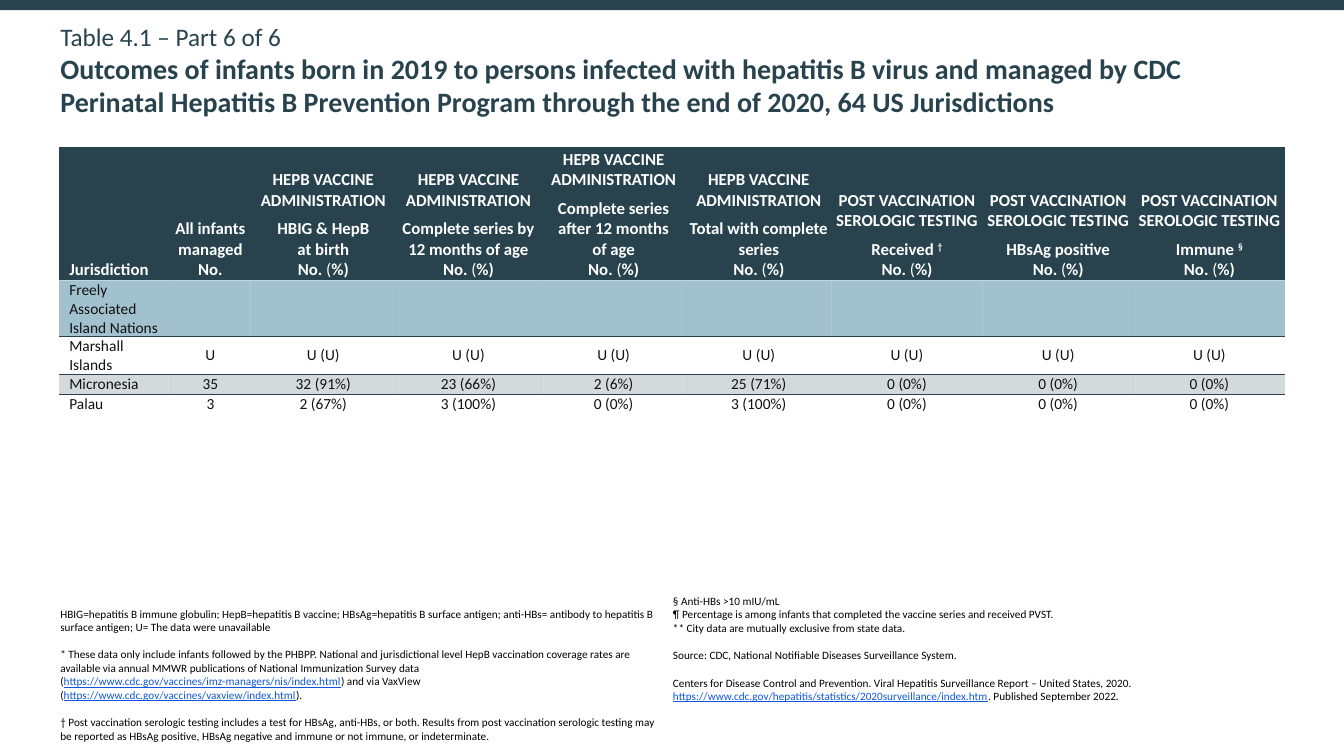
from copy import deepcopy

from lxml.etree import SubElement
from pptx import Presentation
from pptx.dml.color import RGBColor
from pptx.enum.shapes import MSO_SHAPE
from pptx.enum.text import MSO_ANCHOR, PP_ALIGN
from pptx.oxml import parse_xml
from pptx.oxml.ns import nsdecls, qn
from pptx.util import Pt

COLORS = {
    "navy": "28434E", "steel": "6499AF", "white": "FFFFFF",
    "ink": "111111", "black": "000000", "link": "0F56DC",
}
PLAIN_TABLE = "{2D5ABB26-0587-4C30-8999-92F81FD0307C}"


def span(text, **style):
    return text, style


class Page:
    """Holds the slide and its style, and draws each kind of element."""

    def __init__(self, deck, font="Calibri"):
        self.font = font
        self.shapes = deck.slides.add_slide(deck.slide_layouts[6]).shapes

    def add_span(self, para, text, size=12, color="black", bold=False,
                 underline=False, raised=False):
        for index, line in enumerate(text.split("\n")):
            if index:
                para.add_line_break()
                para._p[-1].append(deepcopy(run._r.rPr))
            run = para.add_run()
            run.text = line
            font = run.font
            font.name, font.size = self.font, Pt(size)
            font.bold, font.underline = bold, underline
            font.color.rgb = RGBColor.from_string(COLORS[color])
            if raised:
                font._element.set("baseline", "30000")

    def add_paras(self, frame, paras, before=(), after=(), align=PP_ALIGN.LEFT,
                  **style):
        frame.word_wrap = True
        for index, spans in enumerate(paras):
            para = frame.add_paragraph() if index else frame.paragraphs[0]
            para.alignment = align
            if index in before:
                para.space_before = Pt(10)
            if index in after:
                para.space_after = Pt(6)
            for item in [spans] if isinstance(spans, str) else spans:
                text, extra = span(item) if isinstance(item, str) else item
                self.add_span(para, text, **{**style, **extra})

    def band(self, left, top, width, height, color):
        box = self.shapes.add_shape(
            MSO_SHAPE.RECTANGLE, Pt(left), Pt(top), Pt(width), Pt(height))
        box.shadow.inherit = False
        box.fill.solid()
        box.fill.fore_color.rgb = RGBColor.from_string(COLORS[color])
        box.line.fill.background()

    def text(self, left, top, width, height, paras, **style):
        box = self.shapes.add_textbox(Pt(left), Pt(top), Pt(width), Pt(height))
        self.add_paras(box.text_frame, paras, **style)

    def table(self, left, top, widths, heights):
        frame = self.shapes.add_table(
            len(heights), len(widths), Pt(left), Pt(top),
            Pt(sum(widths)), Pt(sum(heights)))
        table = frame.table
        table._tbl.tblPr.find(qn("a:tableStyleId")).text = PLAIN_TABLE
        table.horz_banding = False
        for column, width in zip(table.columns, widths):
            column.width = Pt(width)
        for row, height in zip(table.rows, heights):
            row.height = Pt(height)
        return table

    def cell(self, cell, paras, first, fill=None, opacity=100, top_inset=0,
             anchor=MSO_ANCHOR.MIDDLE, rules=(), **style):
        cell.margin_left = Pt(7.2 if first else 0.7)
        cell.margin_right, cell.margin_bottom = Pt(0.7), Pt(0)
        cell.margin_top = Pt(top_inset)
        cell.vertical_anchor = anchor
        if fill:
            cell.fill.solid()
            cell.fill.fore_color.rgb = RGBColor.from_string(COLORS[fill])
            if opacity < 100:
                color = cell._tc.tcPr.find(qn("a:solidFill"))[0]
                SubElement(color, qn("a:alpha"), val=str(opacity * 1000))
        else:
            cell.fill.background()
        for place, side in enumerate(rules):
            cell._tc.tcPr.insert(place, parse_xml(
                f'<a:{side} {nsdecls("a")} w="12700"><a:solidFill>'
                f'<a:srgbClr val="{COLORS["navy"]}"/></a:solidFill></a:{side}>'))
        align = PP_ALIGN.LEFT if first else PP_ALIGN.CENTER
        self.add_paras(cell.text_frame, paras, align=align, **style)


def outcome_heading(group, *label):
    percent = ["No.", span(" (", bold=False), "%)"]
    return [group, label, percent]


def main():
    deck = Presentation()
    deck.slide_width, deck.slide_height = Pt(960), Pt(540)
    page = Page(deck)
    page.band(0, 0, 960, 7.2, "navy")
    page.text(36, 11.5, 882, 72, [[
        span("Table 4.1 – Part 6 of 6\n", size=18, bold=False),
        "Outcomes of infants born in 2019 to persons infected with hepatitis B "
        "virus and managed by CDC Perinatal Hepatitis B Prevention Program "
        "through the end of 2020, 64 US Jurisdictions",
    ]], size=20, bold=True, color="navy")

    vaccine = "HEPB VACCINE ADMINISTRATION"
    testing = "POST VACCINATION SEROLOGIC TESTING"
    headings = [
        ["Jurisdiction"],
        ["All infants managed", "No."],
        outcome_heading(vaccine, "HBIG & HepB\nat birth"),
        outcome_heading(vaccine, "Complete series by 12 months of age"),
        outcome_heading(vaccine, "Complete series after 12 months\nof age"),
        outcome_heading(vaccine, "Total with complete series"),
        outcome_heading(testing, "Received ", span("†", raised=True)),
        outcome_heading(testing, "HBsAg positive"),
        outcome_heading(testing, "Immune ", span("§", raised=True)),
    ]
    unknown, none = "U (U)", "0 (0%)"
    both = ("lnT", "lnB")
    rows = [
        (["Freely Associated Island Nations"] + [""] * 8,
         dict(fill="steel", opacity=60, rules=["lnB"])),
        (["Marshall Islands", "U"] + [unknown] * 7, dict(rules=both)),
        (["Micronesia", "35", "32 (91%)", "23 (66%)", "2 (6%)", "25 (71%)"]
         + [none] * 3, dict(fill="navy", opacity=20, rules=both)),
        (["Palau", "3", "2 (67%)", "3 (100%)", none, "3 (100%)"] + [none] * 3,
         dict(rules=["lnT"])),
    ]
    widths = [79.2, 57.6] + [103.7] * 4 + [108] * 3
    table = page.table(42.3, 105, widths, [95.3, 40.3, 26.9, 14.4, 14.4])
    for column, heading in enumerate(headings):
        page.cell(table.cell(0, column), heading, column == 0, fill="navy",
                  top_inset=0.7, anchor=MSO_ANCHOR.BOTTOM, color="white",
                  bold=True, after=[0] if column > 1 else [])
    for row, (values, look) in enumerate(rows, 1):
        for column, value in enumerate(values):
            page.cell(table.cell(row, column), [value], column == 0,
                      size=11, color="ink", **look)

    link = dict(color="link", underline=True)
    page.text(36, 430, 444, 106, [
        "HBIG=hepatitis B immune globulin; HepB=hepatitis B vaccine; "
        "HBsAg=hepatitis B surface antigen; anti-HBs= antibody to hepatitis B "
        "surface antigen; U= The data were unavailable",
        ["* These data only include infants followed by the PHBPP. National and "
         "jurisdictional level HepB vaccination coverage rates are available via "
         "annual MMWR publications of National Immunization Survey data (",
         span("https://www.cdc.gov/vaccines/imz-managers/nis/index.html", **link),
         ") and via VaxView (",
         span("https://www.cdc.gov/vaccines/vaxview/index.html", **link), ")."],
        "† Post vaccination serologic testing includes a test for HBsAg, anti-HBs, "
        "or both. Results from post vaccination serologic testing may be reported "
        "as HBsAg positive, HBsAg negative and immune or not immune, or "
        "indeterminate.",
    ], size=8, before=[1, 2])
    page.text(473.6, 421, 354.3, 104.4, [
        "§ Anti-HBs >10 mIU/mL",
        "¶ Percentage is among infants that completed the vaccine series and "
        "received PVST.",
        "** City data are mutually exclusive from state data.",
        "Source: CDC, National Notifiable Diseases Surveillance System.",
        ["Centers for Disease Control and Prevention. Viral Hepatitis "
         "Surveillance Report – United States, 2020. ",
         span("https://www.cdc.gov/hepatitis/statistics/2020surveillance/index.htm",
              **link),
         ". Published September 2022."],
    ], size=8, before=[3, 4])
    deck.save("out.pptx")


if __name__ == "__main__":
    main()
